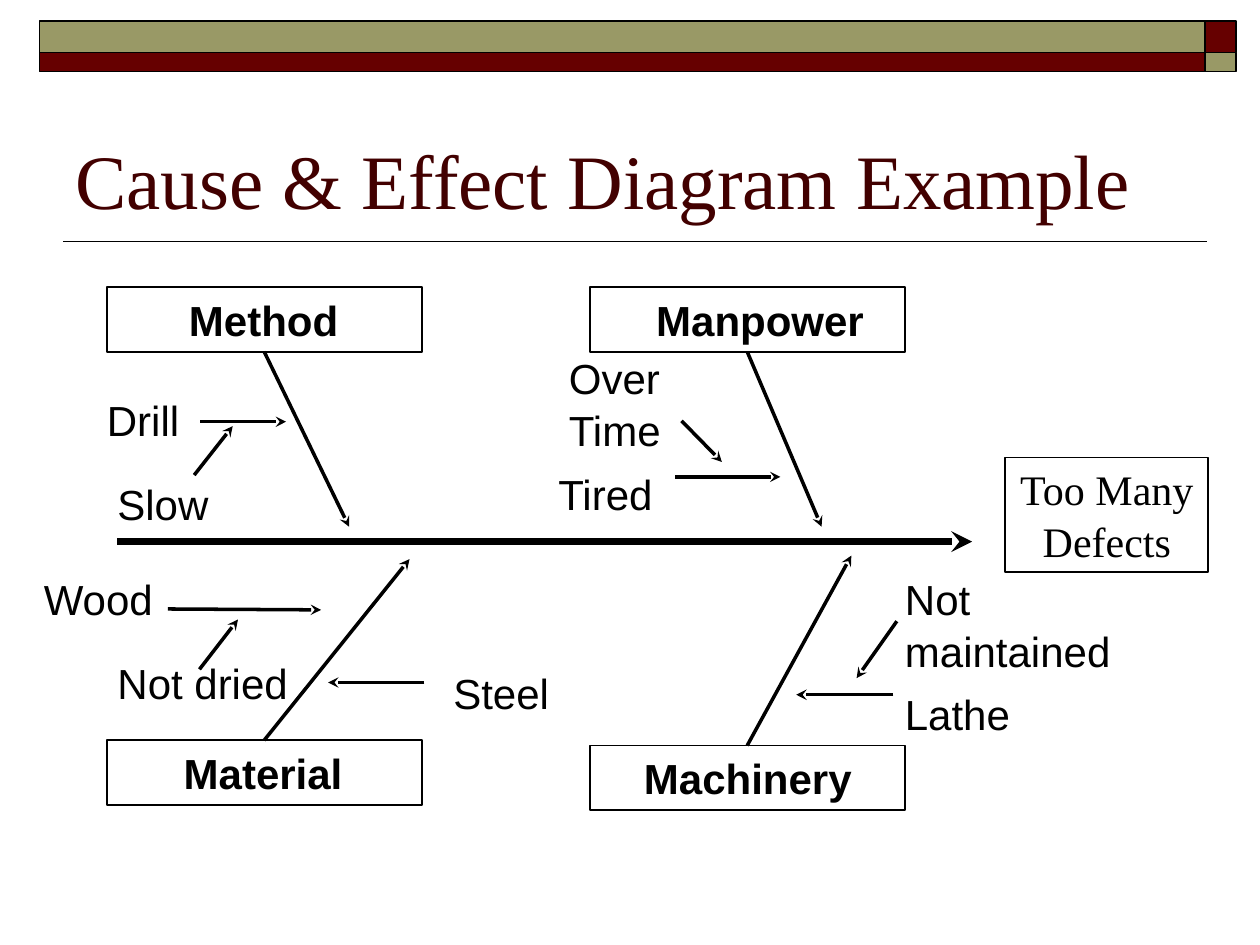
from lxml import etree
from pptx import Presentation
from pptx.dml.color import RGBColor
from pptx.enum import shapes as sh, text as tx
from pptx.oxml import ns
from pptx.util import Pt

INK, WINE, OLIVE, TITLE = "000000", "660000", "999966", "420000"
SANS, SERIF = "Arial", "Times New Roman"

BANDS = [
    (688.5, 12, 18, 18, WINE),
    (22.5, 12, 666, 18, OLIVE),
    (22.5, 30, 666, 11, WINE),
    (688.5, 30, 18, 11, OLIVE),
]
CAUSES = [
    ("Method", 61, 164, 47, 2, (199.5, 301)),
    ("Manpower", 337, 164, 38, 2, (469.5, 301)),
    ("Material", 61, 423, 44, 0, (234, 319.5)),
    ("Machinery", 337, 426, 31, 0, (486.5, 317.5)),
]
TWIGS = [
    (114.5, 241, 163.5, 241),
    (386, 272.5, 446, 272.5),
    (242.5, 390, 187.5, 390),
    (96, 348, 183.5, 348.5),
    (510.5, 397, 455, 397),
    (389.5, 240.5, 412.5, 264),
    (512.5, 355, 489.5, 387.5),
    (111, 271.5, 133, 243.5),
    (114, 382.5, 136, 354),
]
NOTES = [
    ("Tired", 312, 264, 69, 36),
    ("Not\nmaintained", 510, 324, 132, 65),
    ("Lathe", 510, 390, 74, 36),
    ("Wood", 18, 324, 77, 36),
    ("Steel", 252, 378, 69, 36),
    ("Drill", 54, 222, 56, 36),
    ("Slow", 60, 270, 66, 36),
    ("Over\nTime", 318, 198, 68, 65),
    ("Not dried", 60, 372, 112, 36),
]


def tint(code):
    """Turn a hex string into a colour."""
    return RGBColor.from_string(code)


def write(shape, words, font=SANS, size=24, hue=INK, bold=False,
          align=tx.PP_ALIGN.LEFT, wrap=False):
    """Fill a shape with words, one paragraph to a line."""
    frame = shape.text_frame
    frame.text = words
    frame.word_wrap = wrap
    frame.auto_size = tx.MSO_AUTO_SIZE.NONE
    for i, para in enumerate(frame.paragraphs):
        para.alignment = align
        para.space_before = Pt(1 if i else 0)
        para.font.name = font
        para.font.size = Pt(size)
        para.font.bold = bold
        para.font.color.rgb = tint(hue)


def box(slide, x, y, w, h, fill=None):
    """Draw a thin-lined rectangle, filled or hollow."""
    rect = slide.shapes.add_shape(
        sh.MSO_SHAPE.RECTANGLE, Pt(x), Pt(y), Pt(w), Pt(h))
    rect.shadow.inherit = False
    if fill:
        rect.fill.solid()
        rect.fill.fore_color.rgb = tint(fill)
    else:
        rect.fill.background()
    rect.line.color.rgb = tint(INK)
    rect.line.width = Pt(1)
    return rect


def line(slide, x1, y1, x2, y2, width=2, head=True):
    """Draw a straight line, with an arrowhead at its end if wanted."""
    link = slide.shapes.add_connector(
        sh.MSO_CONNECTOR.STRAIGHT, Pt(x1), Pt(y1), Pt(x2), Pt(y2))
    link.line.color.rgb = tint(INK)
    link.line.width = Pt(width)
    if head:
        etree.SubElement(link.line._get_or_add_ln(), ns.qn("a:tailEnd"),
                         type="stealth")
    etree.SubElement(link._element.spPr, ns.qn("a:effectLst"))
    return link


def note(slide, words, x, y, w, h):
    """Place a free label."""
    label = slide.shapes.add_textbox(Pt(x), Pt(y), Pt(w), Pt(h))
    write(label, words)


def cause(slide, name, x, y, inset, side, tip):
    """Draw a named cause box and the rib that leaves its side."""
    wide, high = 180, 37
    rect = box(slide, x, y, wide, high)
    write(rect, name, bold=True)
    rect.text_frame.margin_left = Pt(inset)
    rib = line(slide, x + wide / 2, y + high * side / 2, *tip)
    rib.begin_connect(rect, side)


def head(slide, words):
    """Set the title in its placeholder."""
    title = slide.shapes.title
    title.left, title.top, title.width, title.height = map(
        Pt, (36, 42, 648, 90))
    write(title, words, SERIF, 44, TITLE, wrap=True)
    title.text_frame.vertical_anchor = tx.MSO_ANCHOR.BOTTOM


def main():
    """Build the slide and save it."""
    deck = Presentation()
    deck.slide_width, deck.slide_height = Pt(720), Pt(540)
    slide = deck.slides.add_slide(deck.slide_layouts[5])
    line(slide, 36, 138, 690, 138, 1, False)
    for band in BANDS:
        box(slide, *band)
    head(slide, "Cause & Effect Diagram Example")
    for item in CAUSES:
        cause(slide, *item)
    line(slide, 67, 309.5, 555.5, 309.5, 4)
    for twig in TWIGS:
        line(slide, *twig)
    effect = box(slide, 574.5, 261.5, 116, 65.5)
    write(effect, "Too Many\nDefects", SERIF, align=tx.PP_ALIGN.CENTER)
    for item in NOTES:
        note(slide, *item)
    deck.save("out.pptx")


if __name__ == "__main__":
    main()
